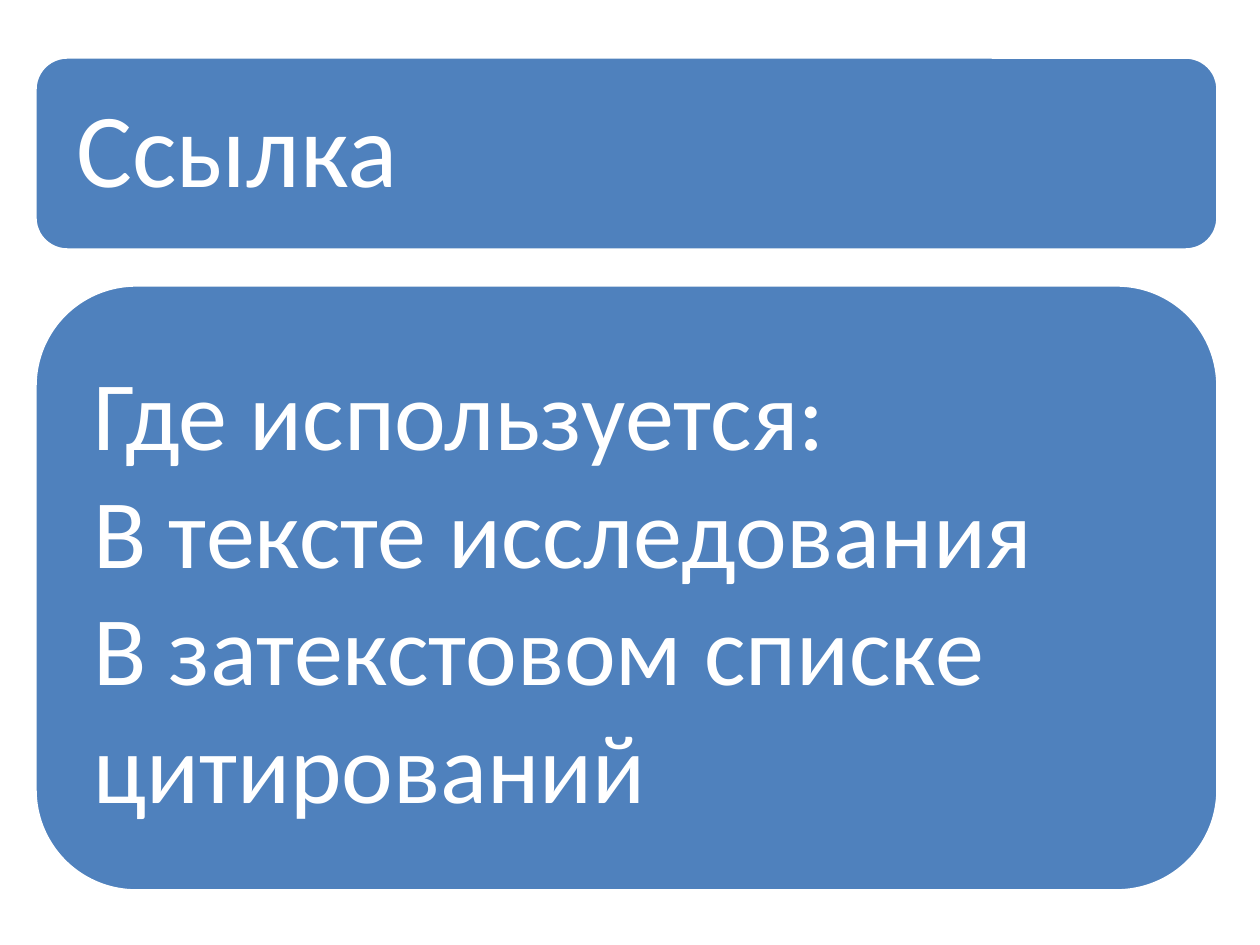
from dataclasses import dataclass

import pptx
import pptx.dml.color
import pptx.enum.shapes
import pptx.enum.text
import pptx.util

PX_PER_INCH = 126


def px(n):
    return pptx.util.Emu(round(n * 914400 / PX_PER_INCH))


def rgb(code):
    return pptx.dml.color.RGBColor.from_string(code)


@dataclass(frozen=True)
class Theme:
    font: str = "Calibri"
    panel: str = "4F81BD"
    white: str = "FFFFFF"
    title_size: int = 60
    body_size: int = 56
    outline: int = 2


class Deck:
    """Holds the theme and the current slide."""

    def __init__(self, width, height, theme):
        self.theme = theme
        self.prs = pptx.Presentation()
        self.prs.slide_width, self.prs.slide_height = px(width), px(height)
        self.slide = self.prs.slides.add_slide(self.prs.slide_layouts[6])

    def panel(self, x, y, w, h, lines, size, inset, line_spacing=1.0):
        """Add a rounded panel with one left-aligned paragraph per line."""
        sp = self.slide.shapes.add_shape(
            pptx.enum.shapes.MSO_SHAPE.ROUNDED_RECTANGLE, px(x), px(y), px(w), px(h))
        sp.shadow.inherit = False
        sp.fill.solid()
        sp.fill.fore_color.rgb = rgb(self.theme.panel)
        sp.line.color.rgb = rgb(self.theme.white)
        sp.line.width = pptx.util.Pt(self.theme.outline)

        tf = sp.text_frame
        tf.word_wrap = True
        tf.vertical_anchor = pptx.enum.text.MSO_ANCHOR.MIDDLE
        tf.margin_left = tf.margin_right = px(inset)
        tf.margin_top = tf.margin_bottom = px(inset)
        for i, line in enumerate(lines):
            p = tf.add_paragraph() if i else tf.paragraphs[0]
            p.alignment = pptx.enum.text.PP_ALIGN.LEFT
            p.line_spacing = line_spacing
            r = p.add_run()
            r.text = line
            r.font.name = self.theme.font
            r.font.size = pptx.util.Pt(size)
            r.font.color.rgb = rgb(self.theme.white)


def main():
    theme = Theme()
    deck = Deck(1260, 945, theme)
    left, width = 35, 1183
    deck.panel(left, 57, width, 193, ["Ссылка"], theme.title_size,
               inset=32, line_spacing=0.9)
    deck.panel(left, 285, width, 606,
               ["Где используется:",
                "В тексте исследования",
                "В затекстовом списке цитирований"],
               theme.body_size, inset=29)
    deck.prs.save("out.pptx")


if __name__ == "__main__":
    main()
